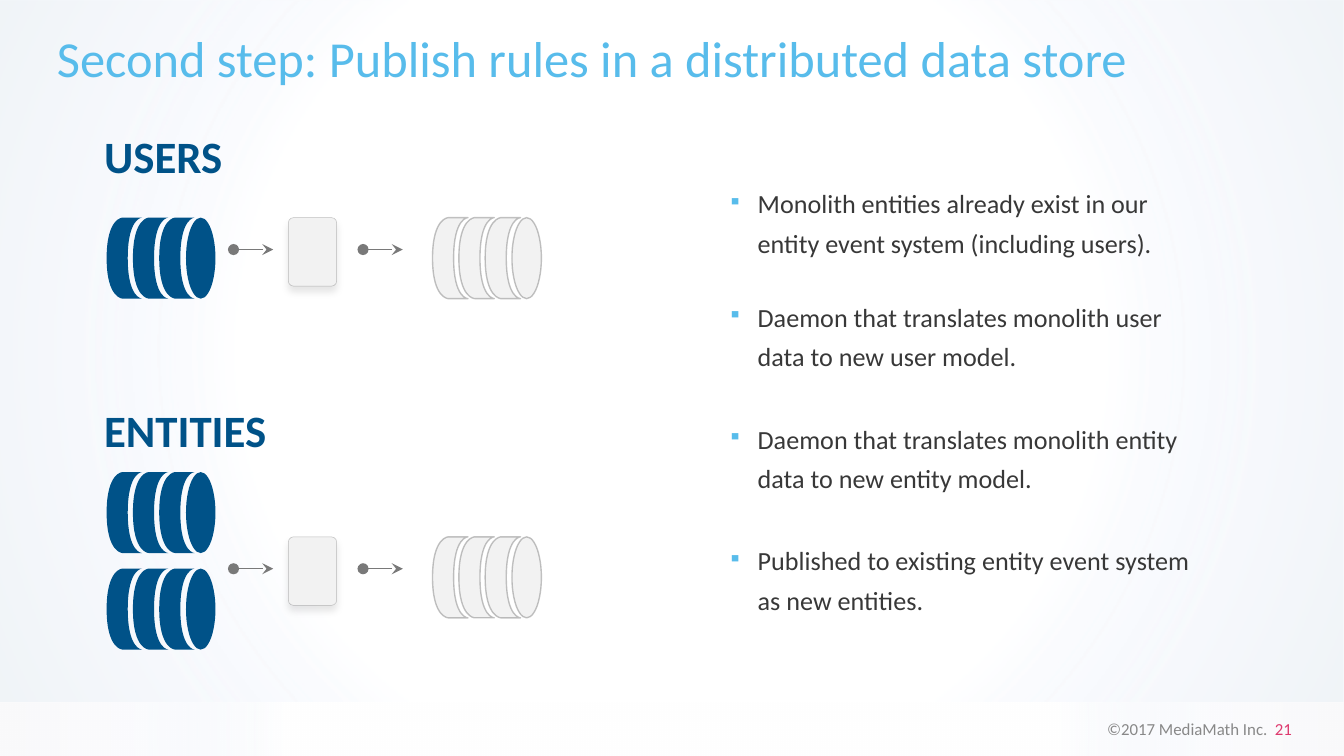
"""Builds the slide about publishing rules in a distributed data store."""
from lxml import etree
from pptx import Presentation
from pptx import util as u
from pptx.dml import color
from pptx.enum import shapes, text
from pptx.oxml import ns, parse_xml

FONT = "Calibri"
NAVY, SKY, PALE, GRAY, INK = "005288", "58BCEB", "F2F2F2", "797979", "2A2A2A"
BULLETS = [
    ("Monolith entities already exist in our entity event system (including users).", 0),
    ("Daemon that translates monolith user data to new user model.", 18.8),
    ("Daemon that translates monolith entity data to new entity model.", 23.2),
    ("Published to existing entity event system as new entities.", 23.2),
]
LENGTH, DEPTH = 43.4, 19
BAND = [
    [(0, 10.5)],
    [(0, 0)],
    [(0, 0), (0, 7.7), (21.7, 7.7)],
    [(43.4, 7.7), (43.4, 0), (43.4, 0)],
    [(43.4, 10.5)],
    [(43.4, 10.5), (43.4, 19), (21.7, 19)],
    [(0, 19), (0, 10.5), (0, 10.5)],
]


def rgb(value):
    """Return the colour for a hex string."""
    return color.RGBColor.from_string(value)


def add_child(parent, tag, **attributes):
    """Append a DrawingML element with the given attributes."""
    child = etree.SubElement(parent, ns.qn(tag))
    for name, value in attributes.items():
        child.set(name, str(value))
    return child


def paint(shape, fill, line_width=0):
    """Give a shape a flat fill and an optional faint outline."""
    shape.shadow.inherit = False
    shape.fill.solid()
    shape.fill.fore_color.rgb = rgb(fill)
    if not line_width:
        shape.line.fill.background()
        return
    shape.line.width = u.Pt(line_width)
    shape.line.color.rgb = rgb(INK)
    line_color = shape._element.xpath("./p:spPr/a:ln//a:srgbClr")[0]
    add_child(line_color, "a:alpha", val=28000)


def add_backdrop(slide, top, height, stops):
    """Add a full-width rectangle with a circular gradient."""
    shape = slide.shapes.add_shape(
        shapes.MSO_SHAPE.RECTANGLE, u.Pt(-0.5), u.Pt(top), u.Pt(721), u.Pt(height))
    paint(shape, "FFFFFF")
    gradient = parse_xml(f"<a:gradFill {ns.nsdecls('a')} rotWithShape='1'/>")
    stop_list = add_child(gradient, "a:gsLst")
    for position, value, opacity in stops:
        stop = add_child(stop_list, "a:gs", pos=position * 1000)
        stop_color = add_child(stop, "a:srgbClr", val=value)
        add_child(stop_color, "a:alpha", val=opacity * 1000)
    circle = add_child(gradient, "a:path", path="circle")
    add_child(circle, "a:fillToRect", l=50000, t=50000, r=50000, b=50000)
    solid = shape._element.spPr.find(ns.qn("a:solidFill"))
    solid.getparent().replace(solid, gradient)


def add_text_box(slide, left, top, width, height, wrap=True):
    """Add an empty text box and return its text frame."""
    box = slide.shapes.add_textbox(u.Pt(left), u.Pt(top), u.Pt(width), u.Pt(height))
    box.text_frame.word_wrap = wrap
    return box.text_frame


def format_run(run, size, value, bold=False):
    """Set the font of one run."""
    run.font.name = FONT
    run.font.size = u.Pt(size)
    run.font.bold = bold
    run.font.color.rgb = rgb(value)


def add_title(slide, words):
    """Add the slide title."""
    frame = add_text_box(slide, 23.4, 14.4, 671.8, 35.3)
    frame.vertical_anchor = text.MSO_ANCHOR.MIDDLE
    frame.text = words
    frame.paragraphs[0].line_spacing = u.Pt(30)
    format_run(frame.paragraphs[0].runs[0], 27, SKY)


def add_heading(slide, words, top, width):
    """Add a bold heading above a flow."""
    frame = add_text_box(slide, 48.7, top, width, 36, wrap=False)
    frame.text = words
    format_run(frame.paragraphs[0].runs[0], 24, NAVY, bold=True)


def add_footer(slide, notice, number):
    """Add the copyright line with the slide number."""
    frame = add_text_box(slide, 531.4, 381.6, 167.8, 18)
    paragraph = frame.paragraphs[0]
    paragraph.alignment = text.PP_ALIGN.RIGHT
    for words, value in ((notice, "888888"), (number, "DE396E")):
        run = paragraph.add_run()
        run.text = words
        format_run(run, 9, value)


def add_bullets(slide, items):
    """Add the bulleted explanation."""
    frame = add_text_box(slide, 382.3, 92.9, 262.8, 255.6)
    for index, (words, space) in enumerate(items):
        paragraph = frame.add_paragraph() if index else frame.paragraphs[0]
        paragraph.text = words
        paragraph.line_spacing = 1.25
        paragraph.space_before = u.Pt(space)
        properties = paragraph._p.get_or_add_pPr()
        properties.set("marL", str(u.Pt(16.5)))
        properties.set("indent", str(u.Pt(-16)))
        bullet_color = add_child(properties, "a:buClr")
        add_child(bullet_color, "a:srgbClr", val=SKY)
        add_child(properties, "a:buSzPct", val=75000)
        add_child(properties, "a:buChar", char="▪")
        format_run(paragraph.runs[0], 14, "383838")


def add_band(group, left, top):
    """Add one curved band, drawn upright and turned a quarter."""
    x, y = left + (DEPTH - LENGTH) / 2, top + (LENGTH - DEPTH) / 2
    corners = [(u.Pt(x + a), u.Pt(y + b))
               for a, b in ((0, 0), (LENGTH, 0), (LENGTH, DEPTH), (0, DEPTH))]
    builder = group.shapes.build_freeform(*corners[0])
    builder.add_line_segments(corners[1:], close=True)
    band = builder.convert_to_shape()
    outline = band._element.xpath(".//a:pathLst/a:path")[0]
    for child in list(outline):
        outline.remove(child)
    for index, points in enumerate(BAND):
        tag = "a:cubicBezTo" if len(points) == 3 else "a:lnTo" if index else "a:moveTo"
        segment = add_child(outline, tag)
        for a, b in points:
            add_child(segment, "a:pt", x=u.Pt(a), y=u.Pt(b))
    add_child(outline, "a:close")
    return band


def add_cylinder(slide, left, top, fill, line_width=0):
    """Add a lying cylinder: an end face and three curved bands."""
    group = slide.shapes.add_group_shape()
    face = group.shapes.add_shape(
        shapes.MSO_SHAPE.OVAL, u.Pt(left + 28.7), u.Pt(top + 13.8), u.Pt(LENGTH), u.Pt(15.8))
    parts = [face] + [add_band(group, left + step * 14.1, top) for step in (2, 1, 0)]
    for part in parts:
        part.rotation = 90
        paint(part, fill, line_width)


def add_card(slide, left, top):
    """Add a rounded card with a soft shadow."""
    card = slide.shapes.add_shape(
        shapes.MSO_SHAPE.ROUNDED_RECTANGLE, u.Pt(left), u.Pt(top), u.Pt(25.9), u.Pt(36.7))
    card.adjustments[0] = 0.11
    paint(card, PALE, 0.25)
    effects = card._element.spPr.find(ns.qn("a:effectLst"))
    shadow = add_child(effects, "a:outerShdw", blurRad=u.Pt(4), dist=u.Pt(3),
                       dir=5400000, algn="t", rotWithShape=0)
    shadow_color = add_child(shadow, "a:srgbClr", val="000000")
    add_child(shadow_color, "a:alpha", val=10000)


def add_arrow(slide, left, y):
    """Add a short arrow that starts with a dot."""
    arrow = slide.shapes.add_connector(
        shapes.MSO_CONNECTOR.STRAIGHT, u.Pt(left), u.Pt(y), u.Pt(left + 21.3), u.Pt(y))
    arrow.line.width = u.Pt(0.5)
    arrow.line.color.rgb = rgb(GRAY)
    line = arrow.line._get_or_add_ln()
    add_child(line, "a:headEnd", type="oval")
    add_child(line, "a:tailEnd", type="stealth")
    add_child(arrow._element.spPr, "a:effectLst")


def add_flow(slide, top, source_top):
    """Add a source store, a daemon card and a target store."""
    add_cylinder(slide, 57.1, source_top, NAVY)
    add_card(slide, 154.5, top)
    add_arrow(slide, 125.1, top + 17.1)
    add_cylinder(slide, 231.7, top, PALE, 0.75)
    add_arrow(slide, 194.5, top + 17.1)


def main():
    """Build and save the slide."""
    presentation = Presentation()
    presentation.slide_width, presentation.slide_height = u.Pt(720), u.Pt(405)
    slide = presentation.slides.add_slide(presentation.slide_layouts[6])
    add_backdrop(slide, 376.4, 29.5,
                 [(57, "FFFFFF", 100), (78, "F0F4FC", 29), (99, "F0EEF2", 30)])
    add_footer(slide, "©2017 MediaMath Inc.  ", "21")
    add_backdrop(slide, 0, 375.6,
                 [(57, "FFFFFF", 100), (78, "F0F4FC", 50), (99, "E3EBF2", 50)])
    add_title(slide, "Second step: Publish rules in a distributed data store")
    add_heading(slide, "USERS", 65.5, 85.7)
    add_bullets(slide, BULLETS)
    add_flow(slide, 116.6, 116.6)
    add_flow(slide, 287.6, 304.6)
    add_cylinder(slide, 57.1, 252.9, NAVY)
    add_heading(slide, "ENTITIES", 212.4, 131)
    presentation.save("out.pptx")


if __name__ == "__main__":
    main()
